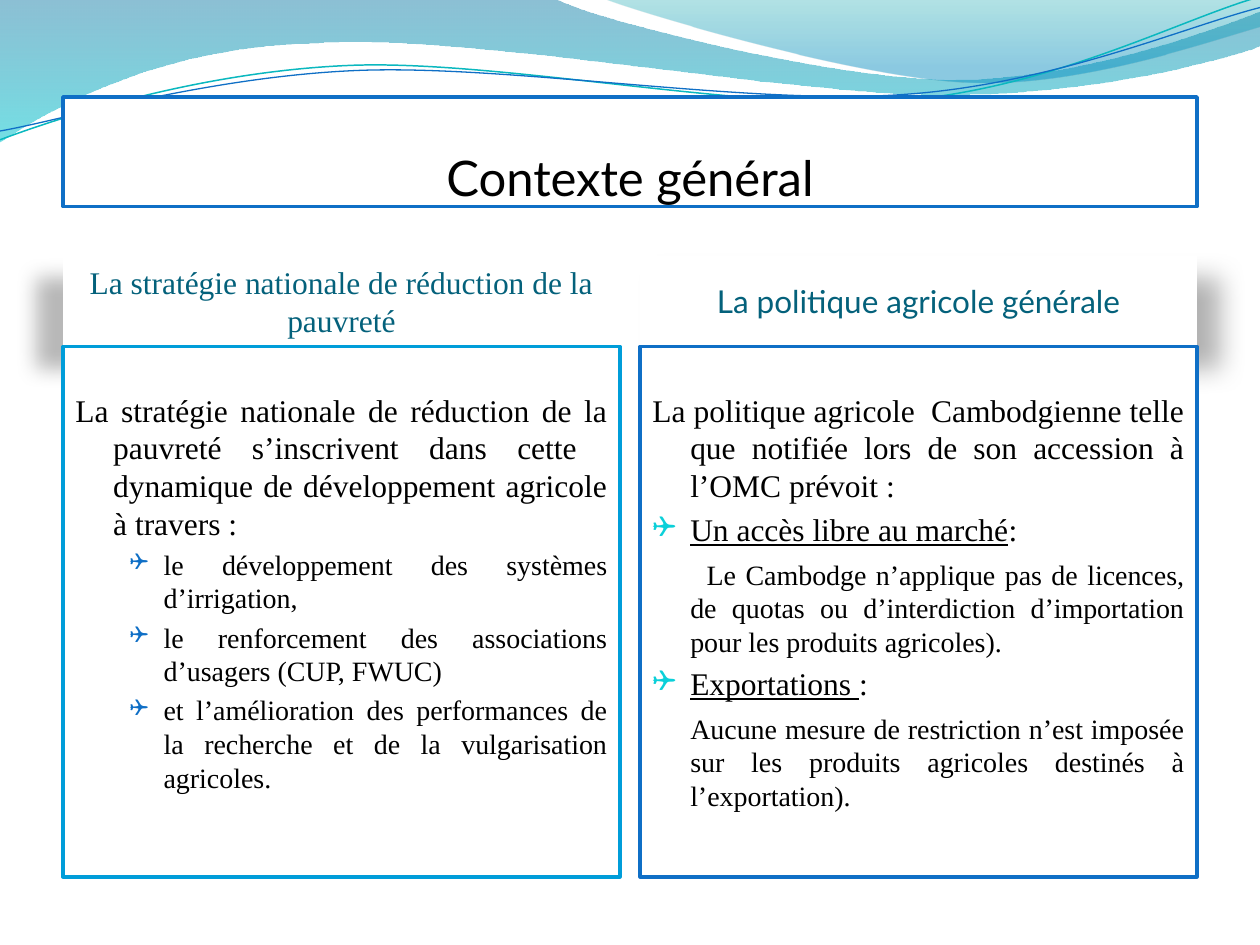
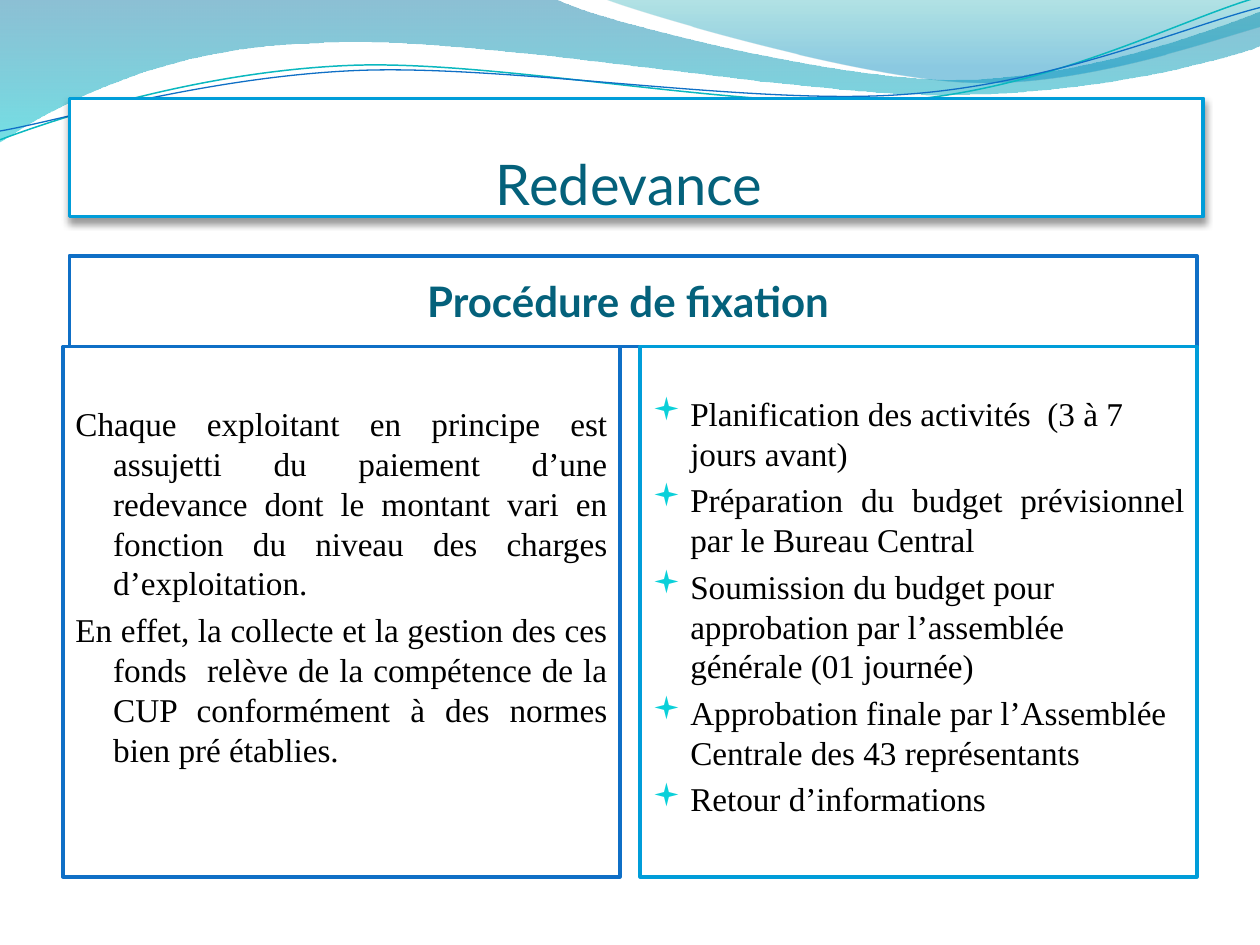
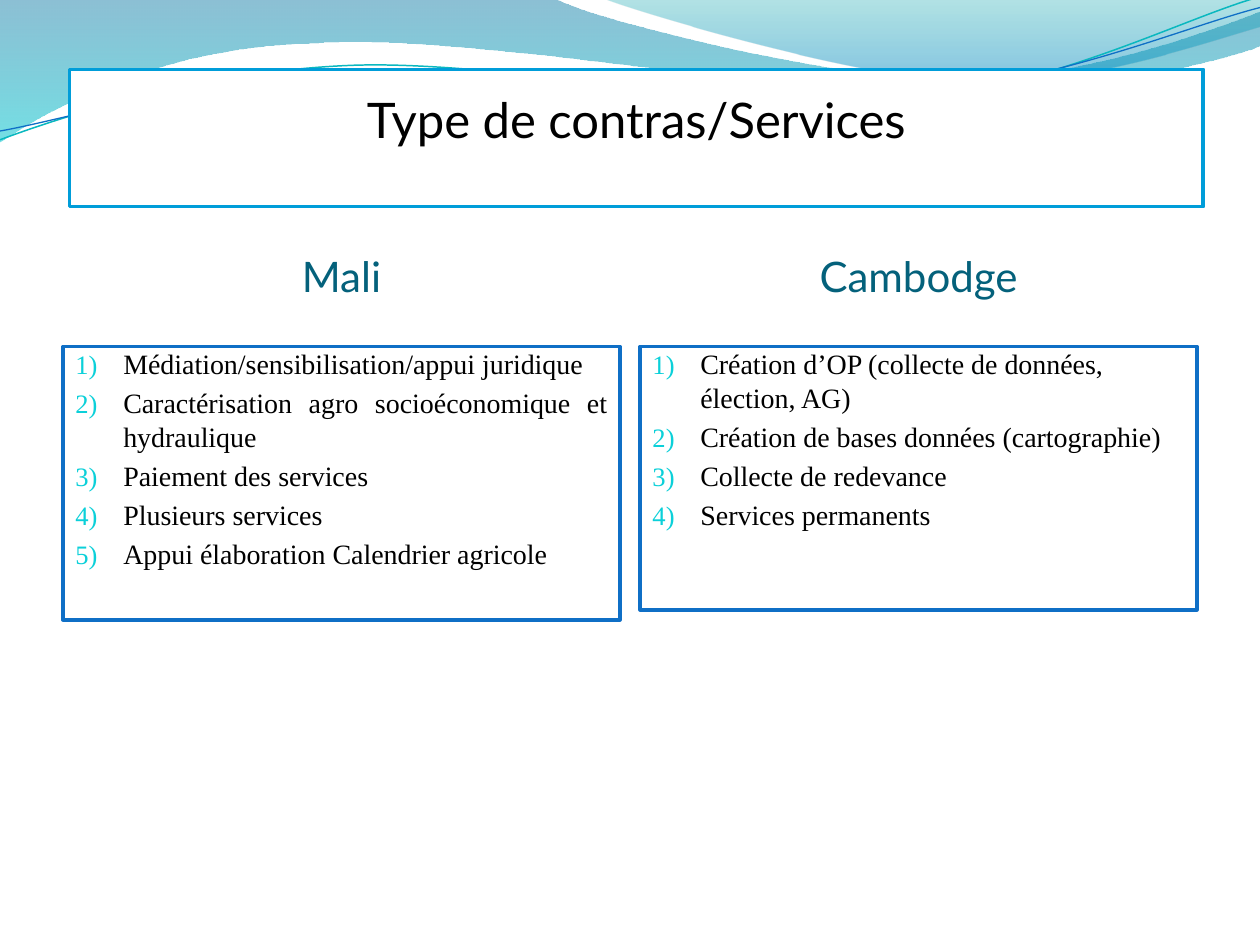
from lxml import etree
from pptx import Presentation
from pptx.dml.color import RGBColor
from pptx.enum.text import MSO_ANCHOR, MSO_AUTO_SIZE, PP_ALIGN
from pptx.oxml.ns import qn
from pptx.util import Inches, Pt

LEFT, CENTER, JUSTIFY = PP_ALIGN.LEFT, PP_ALIGN.CENTER, PP_ALIGN.JUSTIFY
TOP, MIDDLE, BOTTOM = MSO_ANCHOR.TOP, MSO_ANCHOR.MIDDLE, MSO_ANCHOR.BOTTOM
NO_AUTOFIT = MSO_AUTO_SIZE.NONE

COLORS = {"white": "FFFFFF", "black": "000000", "blue": "0F6FC6", "sky": "009DD9",
          "heading": "04617B", "marker": "0BD0D9", "teal": "0AB8BF"}
SANS, SERIF, SYMBOLS = "Lato", "Times New Roman", "Wingdings"

# Grid in inches: two equal columns between the margins
WIDTH, HEIGHT = 10, 7.5
MARGIN, GAP = 0.5, 0.16
COLUMN = (WIDTH - 2 * MARGIN - GAP) / 2
COLUMN_LEFTS = [MARGIN, MARGIN + COLUMN + GAP]
HEADER_TOP, HEADER_HEIGHT = 2.03, 0.72
BODY_TOP, BODY_HEIGHT = HEADER_TOP + HEADER_HEIGHT, 4.21

# Waves: start point, then lines (2 numbers) and curves (6 numbers)
WAVES = [
    {"start": (0, 0), "angle": 270,
     "stops": [(0, "0074A1", 45), (1, "00C6CF", 55)],
     "steps": [(4.4, -0.01), (4.76, 0.17, 6.64, 0.63, 7.58, 0.63),
               (8.53, 0.63, 9.58, 0.26, 10, 0.09), (10.01, 0.36),
               (9.83, 0.44, 8.7, 0.76, 7.46, 0.75),
               (6.22, 0.75, 3.82, 0.28, 2.57, 0.34),
               (1.29, 0.36, 0.46, 0.83, -0.01, 1.13)]},
    {"start": (4.79, -0.01), "angle": 270,
     "stops": [(0, "00A1A9", 30), (0.8, "008BBF", 45)],
     "steps": [(5.09, 0.11, 6.82, 0.62, 7.69, 0.65),
               (8.56, 0.69, 9.61, 0.32, 10, 0.21), (10, 0)]},
    {"start": (0, 1.11), "line": ("teal", 0.85),
     "steps": [(0.48, 0.93, 1.58, 0.57, 2.77, 0.52),
               (3.95, 0.47, 5.93, 0.89, 7.13, 0.8),
               (8.33, 0.71, 9.38, 0.15, 9.98, -0.02)]},
    {"start": (0, 1.04), "line": ("blue", 0.75),
     "steps": [(0.47, 0.96, 1.64, 0.61, 2.83, 0.56),
               (4.03, 0.51, 5.97, 0.84, 7.17, 0.75),
               (8.36, 0.67, 9.41, 0.21, 10, 0.06)]},
]

# Paragraph styles: left margin and first-line indent, marker, extra points before
STYLES = {
    "hanging": {"indent": (0.3, -0.3)},
    "detail": {"indent": (0.3, 0.13), "extra": 2},
    "flush": {"indent": (0.3, 0), "extra": 2},
    "box": {"indent": (0.3, -0.3), "bullet": ("❑", "marker", 95)},
    "sub box": {"indent": (0.7, -0.27), "bullet": ("❑", "blue", 85)},
    "square": {"indent": (0.3, -0.3), "bullet": ("▪", "marker", 95)},
    "number": {"indent": (0.38, -0.38), "bullet": (None, "marker", 95)},
}

# Content. Paragraphs: style, size, alignment, text or (underlined, plain) pair.
# Shadows: opacity %, blur, distance, direction.
SLIDES = [
    {"title": {"text": "Contexte général", "box": (0.5, 0.77, 0.87), "size": 28,
               "color": "black", "line": "blue"},
     "headers": [
         {"text": "La stratégie nationale de réduction de la pauvreté", "font": SERIF,
          "size": 18, "fill": "white", "shadow": (28, 11.8, 19.7, 141)},
         {"text": "La politique agricole générale", "size": 18, "fill": "white",
          "shadow": (30, 15, 18, 45)}],
     "bodies": [
         {"line": "sky", "inset": 0.35, "paragraphs": [
             ("hanging", 18, JUSTIFY, "La stratégie nationale de réduction de la pauvreté s’inscrivent dans cette  dynamique de développement agricole à travers :"),
             ("sub box", 16, JUSTIFY, "le développement des systèmes d’irrigation,"),
             ("sub box", 16, JUSTIFY, "le renforcement des associations d’usagers (CUP, FWUC)"),
             ("sub box", 16, JUSTIFY, "et l’amélioration des performances de la recherche et de la vulgarisation agricoles.")]},
         {"line": "blue", "inset": 0.35, "paragraphs": [
             ("hanging", 18, JUSTIFY, "La politique agricole  Cambodgienne telle que notifiée lors de son accession à l’OMC prévoit :"),
             ("box", 18, JUSTIFY, ("Un accès libre au marché", ":")),
             ("detail", 16, JUSTIFY, "Le Cambodge n’applique pas de licences, de quotas ou d’interdiction d’importation pour les produits agricoles)."),
             ("box", 18, JUSTIFY, ("Exportations ", ":")),
             ("flush", 16, JUSTIFY, "Aucune mesure de restriction n’est imposée sur les produits agricoles destinés à l’exportation).")]}]},
    {"title": {"text": "Redevance ", "box": (0.55, 0.78, 0.94), "size": 32,
               "color": "heading", "line": "sky", "shadow": (40, 4, 3, 90)},
     "headers": [
         {"text": "Procédure de fixation ", "size": 24, "bold": True, "fill": "white",
          "line": "blue", "left": 0.55, "width": 8.95}],
     "bodies": [
         {"line": "blue", "inset": 0.45, "paragraphs": [
             ("hanging", 19, JUSTIFY, "Chaque exploitant en principe est assujetti du paiement d’une redevance dont le montant vari en fonction du niveau des charges d’exploitation."),
             ("hanging", 19, JUSTIFY, "En effet, la collecte et la gestion des ces fonds  relève de la compétence de la CUP conformément à des normes bien pré établies.")]},
         {"line": "sky", "inset": 0.37, "paragraphs": [
             ("square", 19, LEFT, "Planification des activités  (3 à 7 jours avant)"),
             ("square", 19, JUSTIFY, "Préparation du budget prévisionnel par le Bureau Central"),
             ("square", 19, LEFT, "Soumission du budget pour approbation par l’assemblée générale (01 journée)"),
             ("square", 19, LEFT, "Approbation finale par l’Assemblée Centrale des 43 représentants"),
             ("square", 19, LEFT, "Retour d’informations")]}]},
    {"title": {"text": "Type de contras/Services", "box": (0.55, 0.55, 1.09), "size": 28,
               "color": "black", "line": "sky", "inset_bottom": 0.46},
     "headers": [{"text": "Mali", "size": 24, "inset_bottom": 0.4},
                 {"text": "Cambodge", "size": 24, "inset_bottom": 0.4}],
     "bodies": [
         {"line": "blue", "height": 2.17, "paragraphs": [
             ("number", 16, JUSTIFY, "Médiation/sensibilisation/appui juridique"),
             ("number", 16, JUSTIFY, "Caractérisation agro socioéconomique et hydraulique"),
             ("number", 16, JUSTIFY, "Paiement des services"),
             ("number", 16, JUSTIFY, "Plusieurs services"),
             ("number", 16, JUSTIFY, "Appui élaboration Calendrier agricole")]},
         {"line": "blue", "height": 2.09, "paragraphs": [
             ("number", 16, LEFT, "Création d’OP (collecte de données, élection, AG)"),
             ("number", 16, LEFT, "Création de bases données (cartographie)"),
             ("number", 16, LEFT, "Collecte de redevance"),
             ("number", 16, LEFT, "Services permanents")]}]},
]


def rgb(name):
    return RGBColor.from_string(COLORS[name])


def add_element(parent, tag, **attributes):
    values = {key: str(value) for key, value in attributes.items()}
    return etree.SubElement(parent, qn(tag), values)


# Waves
def bend_segments(shape, steps):
    """Turn the straight segments that have control points into curves."""
    segments = list(shape.element.spPr.iter(qn("a:lnTo")))
    for segment, step in zip(segments, steps):
        if len(step) == 2:
            continue
        segment.tag = qn("a:cubicBezTo")
        end_point = segment[0]
        for x, y in (step[0:2], step[2:4]):
            control = add_element(segment, "a:pt", x=Inches(x) - shape.left,
                                  y=Inches(y) - shape.top)
            end_point.addprevious(control)


def draw_wave(slide, wave):
    builder = slide.shapes.build_freeform(*map(Inches, wave["start"]))
    ends = [tuple(map(Inches, step[-2:])) for step in wave["steps"]]
    builder.add_line_segments(ends, close="stops" in wave)
    shape = builder.convert_to_shape()
    bend_segments(shape, wave["steps"])
    shape.shadow.inherit = False
    if "line" in wave:
        color, width = wave["line"]
        shape.fill.background()
        shape.line.color.rgb = rgb(color)
        shape.line.width = Pt(width)
        return shape
    shape.line.fill.background()
    shape.fill.gradient()
    shape.fill.gradient_angle = wave["angle"]
    for stop, (position, color, _) in zip(shape.fill.gradient_stops, wave["stops"]):
        stop.position = position
        stop.color.rgb = RGBColor.from_string(color)
    stop_colors = list(shape.element.spPr.iter(qn("a:srgbClr")))
    for stop_color, (_, _, opacity) in zip(stop_colors, wave["stops"]):
        add_element(stop_color, "a:alpha", val=opacity * 1000)
    return shape


def put_waves_on_layout(slide):
    layout_title = slide.slide_layout.placeholders[0]
    for number, wave in enumerate(WAVES, start=101):
        element = draw_wave(slide, wave).element
        element.nvSpPr.cNvPr.set("id", str(number))
        layout_title.element.addprevious(element)


# Boxes and text
def format_box(shape, box, anchor, insets, fill=None, line=None, shadow=None):
    shape.left, shape.top, shape.width, shape.height = map(Inches, box)
    if fill:
        shape.fill.solid()
        shape.fill.fore_color.rgb = rgb(fill)
    if line:
        shape.line.color.rgb = rgb(line)
        shape.line.width = Pt(2)
    shape.shadow.inherit = False
    if shadow:
        opacity, blur, distance, direction = shadow
        effects = shape.element.spPr.find(qn("a:effectLst"))
        outer = add_element(effects, "a:outerShdw", blurRad=Pt(blur), dist=Pt(distance),
                            dir=direction * 60000, algn="ctr", rotWithShape=0)
        color = add_element(outer, "a:srgbClr", val=COLORS["black"])
        add_element(color, "a:alpha", val=opacity * 1000)
    frame = shape.text_frame
    frame.word_wrap = True
    frame.auto_size = NO_AUTOFIT
    frame.vertical_anchor = anchor
    (frame.margin_left, frame.margin_top,
     frame.margin_right, frame.margin_bottom) = map(Inches, insets)
    return frame


def format_runs(paragraph, font, size, color, bold=False):
    for run in paragraph.runs:
        run.font.name = font
        run.font.size = Pt(size)
        run.font.bold = bold
        run.font.color.rgb = rgb(color)


def format_paragraph(paragraph, style):
    properties = paragraph._p.get_or_add_pPr()
    margin, indent = style["indent"]
    properties.set("marL", str(Inches(margin)))
    properties.set("indent", str(Inches(indent)))
    if "bullet" not in style:
        add_element(properties, "a:buNone")
        return
    character, color, percent = style["bullet"]
    bullet_color = add_element(properties, "a:buClr")
    add_element(bullet_color, "a:srgbClr", val=COLORS[color])
    add_element(properties, "a:buSzPct", val=percent * 1000)
    if character:
        add_element(properties, "a:buFont", typeface=SYMBOLS)
        add_element(properties, "a:buChar", char=character)
    else:
        add_element(properties, "a:buAutoNum", type="arabicParenR")


def add_title(slide, title):
    left, top, height = title["box"]
    frame = format_box(slide.shapes.title, (left, top, WIDTH - 2 * MARGIN, height), BOTTOM,
                       (0, 0.05, 0, title.get("inset_bottom", 0)),
                       "white", title["line"], title.get("shadow"))
    frame.text = title["text"]
    frame.paragraphs[0].alignment = CENTER
    format_runs(frame.paragraphs[0], SANS, title["size"], title["color"])


def add_header(slide, header, column_left):
    box = (header.get("left", column_left), HEADER_TOP,
           header.get("width", COLUMN), HEADER_HEIGHT)
    shape = slide.shapes.add_textbox(*map(Inches, box))
    frame = format_box(shape, box, MIDDLE, (0.05, 0, 0.05, header.get("inset_bottom", 0)),
                       header.get("fill"), header.get("line"), header.get("shadow"))
    frame.text = header["text"]
    frame.paragraphs[0].alignment = CENTER
    format_runs(frame.paragraphs[0], header.get("font", SANS), header["size"],
                "heading", header.get("bold", False))


def add_body(slide, body, column_left):
    box = (column_left, BODY_TOP, COLUMN, body.get("height", BODY_HEIGHT))
    shape = slide.shapes.add_textbox(*map(Inches, box))
    frame = format_box(shape, box, TOP, (0.1, body.get("inset", 0), 0.1, 0.05),
                       "white", body["line"])
    for index, (style_name, size, alignment, text) in enumerate(body["paragraphs"]):
        style = STYLES[style_name]
        paragraph = frame.add_paragraph() if index else frame.paragraphs[0]
        format_paragraph(paragraph, style)
        paragraph.alignment = alignment
        if index:
            paragraph.space_before = Pt(0.2 * size + style.get("extra", 0))
        if isinstance(text, tuple):
            for part in text:
                paragraph.add_run().text = part
            paragraph.runs[0].font.underline = True
        else:
            paragraph.add_run().text = text
        format_runs(paragraph, SERIF, size, "black")


def main():
    presentation = Presentation()
    presentation.slide_width, presentation.slide_height = Inches(WIDTH), Inches(HEIGHT)
    title_only = presentation.slide_layouts[5]
    for index, content in enumerate(SLIDES):
        slide = presentation.slides.add_slide(title_only)
        if index == 0:
            put_waves_on_layout(slide)
        add_title(slide, content["title"])
        for header, column_left in zip(content["headers"], COLUMN_LEFTS):
            add_header(slide, header, column_left)
        for body, column_left in zip(content["bodies"], COLUMN_LEFTS):
            add_body(slide, body, column_left)
    presentation.save("out.pptx")


if __name__ == "__main__":
    main()
